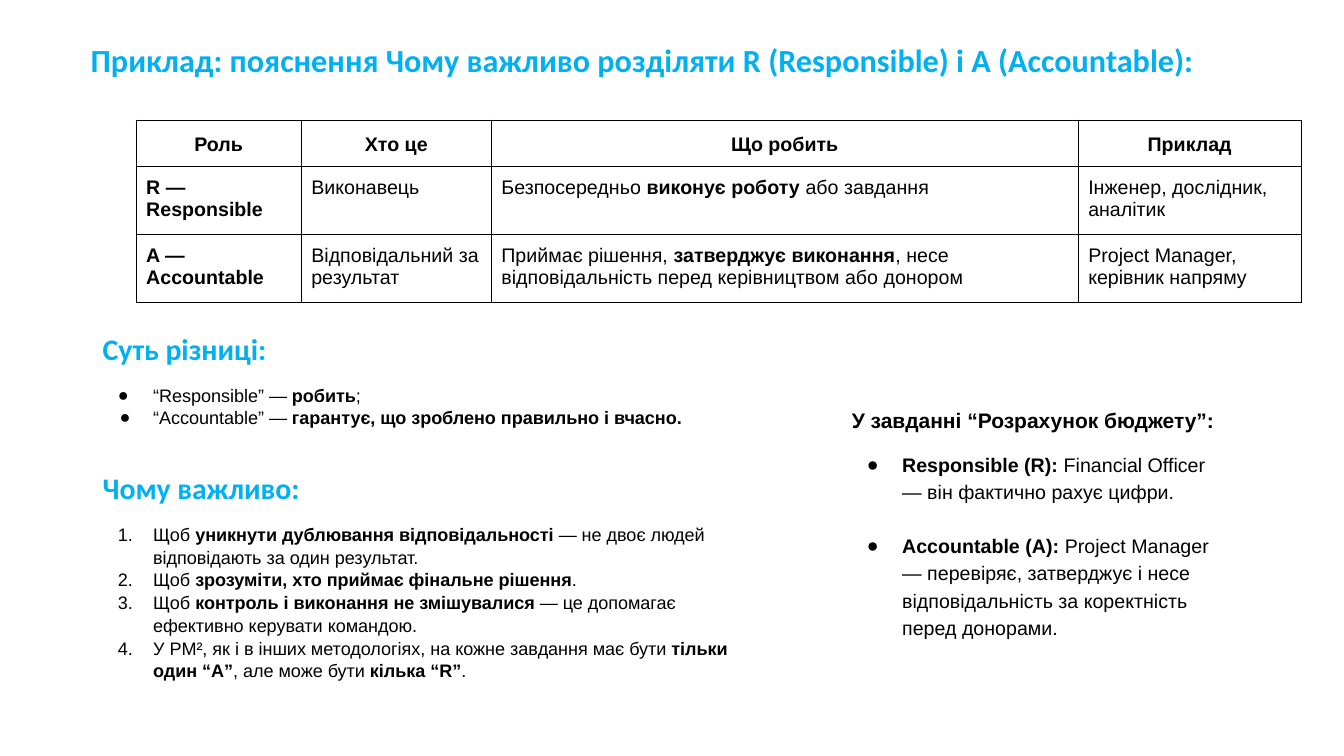
"""Build a slide that explains why the R and A roles must be kept apart."""
from dataclasses import dataclass
from typing import Optional

from lxml.etree import SubElement
from pptx import Presentation
from pptx.dml.color import RGBColor
from pptx.enum.text import MSO_ANCHOR as Anchor, MSO_AUTO_SIZE as AutoSize, PP_ALIGN as Align
from pptx.oxml import parse_xml
from pptx.oxml.ns import nsdecls, qn
from pptx.util import Pt


@dataclass(frozen=True)
class Theme:
    accent: str = "00B0F0"
    ink: str = "000000"
    heading_font: str = "Calibri"
    text_font: str = "Arial"
    title_size: float = 23
    heading_size: float = 21.3
    list_size: float = 12.9
    example_heading_size: float = 15
    text_size: float = 14
    border: float = 0.75
    cell_margin: float = 7.2


@dataclass(frozen=True)
class Box:
    left: float
    top: float
    width: float
    height: float


@dataclass(frozen=True)
class Line:
    text: str
    size: float
    font: str = Theme.text_font
    color: str = Theme.ink
    before: float = 0
    bullet: Optional[str] = None
    hanging: float = 25.2


THEME = Theme()
DOT, NUMBER = "●", "1."
LIST_INDENT = 36

TITLE = "**Приклад: пояснення Чому важливо розділяти R (Responsible) і A (Accountable):**"
TITLE_BOX = Box(57.6, 21.6, 866.9, 46.1)
REASONS_BOX = Box(66.2, 231.1, 490.3, 281.5)
EXAMPLE_BOX = Box(601.2, 285, 282.2, 228)

ROLES_LEFT, ROLES_TOP = 97.2, 85.7
ROLE_WIDTHS = (118, 135.8, 419.2, 159.3)
ROLE_HEIGHTS = (33, 48.6, 48.6)
ROLES = (
    ("**Роль**", "**Хто це**", "**Що робить**", "**Приклад**"),
    ("**R — Responsible**", "Виконавець",
     "Безпосередньо **виконує роботу** або завдання",
     "Інженер, дослідник, аналітик"),
    ("**A — Accountable**", "Відповідальний за результат",
     "Приймає рішення, **затверджує виконання**, несе відповідальність "
     "перед керівництвом або донором",
     "Project Manager, керівник напряму"),
)


def heading(text: str, before: float) -> Line:
    """Describe a coloured section heading."""
    return Line(f"**{text}**", THEME.heading_size, THEME.heading_font, THEME.accent, before)


def reason(text: str, bullet: str, before: float = 0, hanging: float = 25.2) -> Line:
    """Describe a list item of the left column."""
    return Line(text, THEME.list_size, before=before, bullet=bullet, hanging=hanging)


REASONS = (
    heading("Суть різниці:", 12),
    reason("“Responsible” — **робить**;", DOT, 12),
    reason("“Accountable” — **гарантує, що зроблено правильно і вчасно.**", DOT, hanging=24),
    heading("Чому важливо:", 28.3),
    reason("Щоб **уникнути дублювання відповідальності** — не двоє людей "
           "відповідають за один результат.", NUMBER, 12),
    reason("Щоб **зрозуміти, хто приймає фінальне рішення**.", NUMBER),
    reason("Щоб **контроль і виконання не змішувалися** — це допомагає "
           "ефективно керувати командою.", NUMBER),
    reason("У PM², як і в інших методологіях, на кожне завдання має бути "
           "**тільки один “A”**, але може бути **кілька “R”**.", NUMBER),
)
EXAMPLE = (
    Line("**У завданні “Розрахунок бюджету”:**", THEME.example_heading_size, before=12),
    Line("**Responsible (R):** Financial Officer — він фактично рахує цифри.",
         THEME.text_size, before=12, bullet=DOT),
    Line("**Accountable (A):** Project Manager — перевіряє, затверджує і несе "
         "відповідальність за коректність перед донорами.",
         THEME.text_size, before=19.3, bullet=DOT),
)


def write_text(paragraph, text: str, *, size: float, font: str = THEME.text_font,
               color: str = THEME.ink, align=Align.LEFT, spacing: float = 1.0,
               before: float = 0) -> None:
    """Fill a paragraph, setting the parts between double asterisks in bold."""
    paragraph.alignment = align
    paragraph.line_spacing = spacing
    paragraph.space_before = Pt(before)
    paragraph.space_after = Pt(0)
    for position, part in enumerate(text.split("**")):
        if part:
            run = paragraph.add_run()
            run.text = part
            run.font.size = Pt(size)
            run.font.name = font
            run.font.bold = position % 2 == 1
            run.font.color.rgb = RGBColor.from_string(color)


def set_bullet(paragraph, line: Line) -> None:
    """Give a paragraph its indents and its dot, number or no mark."""
    props = paragraph._p.get_or_add_pPr()
    props.set("marL", str(Pt(LIST_INDENT) if line.bullet else 0))
    props.set("indent", str(Pt(-line.hanging) if line.bullet else 0))
    if line.bullet is None:
        SubElement(props, qn("a:buNone"))
        return
    SubElement(SubElement(props, qn("a:buClr")), qn("a:srgbClr"), val=line.color)
    SubElement(props, qn("a:buFont"), typeface=line.font)
    if line.bullet == NUMBER:
        SubElement(props, qn("a:buAutoNum"), type="arabicPeriod")
    else:
        SubElement(props, qn("a:buChar"), char=line.bullet)


def place(placeholder, box: Box, anchor):
    """Move a placeholder and return its prepared text frame."""
    placeholder.left, placeholder.top = Pt(box.left), Pt(box.top)
    placeholder.width, placeholder.height = Pt(box.width), Pt(box.height)
    frame = placeholder.text_frame
    frame.word_wrap = True
    frame.auto_size = AutoSize.NONE
    frame.vertical_anchor = anchor
    return frame


def fill_body(placeholder, box: Box, lines: tuple[Line, ...], spacing: float) -> None:
    """Write headings and list items into a body placeholder."""
    frame = place(placeholder, box, Anchor.TOP)
    for number, line in enumerate(lines):
        paragraph = frame.add_paragraph() if number else frame.paragraphs[0]
        write_text(paragraph, line.text, size=line.size, font=line.font,
                   color=line.color, spacing=spacing, before=line.before)
        set_bullet(paragraph, line)


def format_cell(cell) -> None:
    """Clear a cell's fill and draw its margins and borders."""
    cell.fill.background()
    cell.vertical_anchor = Anchor.TOP
    cell.margin_left = cell.margin_right = Pt(THEME.cell_margin)
    cell.margin_top = cell.margin_bottom = Pt(THEME.cell_margin)
    props = cell._tc.get_or_add_tcPr()
    for order, side in enumerate("LRTB"):
        props.insert(order, parse_xml(
            f'<a:ln{side} {nsdecls("a")} w="{Pt(THEME.border)}"><a:solidFill>'
            f'<a:srgbClr val="{THEME.ink}"/></a:solidFill></a:ln{side}>'))


def add_roles(slide) -> None:
    """Add the table that compares the two roles."""
    roles = slide.shapes.add_table(
        len(ROLES), len(ROLE_WIDTHS), Pt(ROLES_LEFT), Pt(ROLES_TOP),
        Pt(sum(ROLE_WIDTHS)), Pt(sum(ROLE_HEIGHTS))).table
    roles.first_row = roles.horz_banding = False
    for column, width in zip(roles.columns, ROLE_WIDTHS):
        column.width = Pt(width)
    for row, height, texts in zip(roles.rows, ROLE_HEIGHTS, ROLES):
        row.height = Pt(height)
        is_header = texts is ROLES[0]
        for cell, text in zip(row.cells, texts):
            format_cell(cell)
            write_text(cell.text_frame.paragraphs[0], text, size=THEME.text_size,
                       align=Align.CENTER if is_header else Align.LEFT,
                       spacing=1.15 if is_header else 1.0)


def main() -> None:
    """Build and save the presentation."""
    deck = Presentation()
    deck.slide_width, deck.slide_height = Pt(960), Pt(540)
    slide = deck.slides.add_slide(deck.slide_layouts.get_by_name("Two Content"))
    title, reasons, example = slide.placeholders
    write_text(place(title, TITLE_BOX, Anchor.MIDDLE).paragraphs[0], TITLE,
               size=THEME.title_size, font=THEME.heading_font,
               color=THEME.accent, spacing=0.9)
    fill_body(reasons, REASONS_BOX, REASONS, 1.05)
    add_roles(slide)
    fill_body(example, EXAMPLE_BOX, EXAMPLE, 1.15)
    deck.save("out.pptx")


if __name__ == "__main__":
    main()
